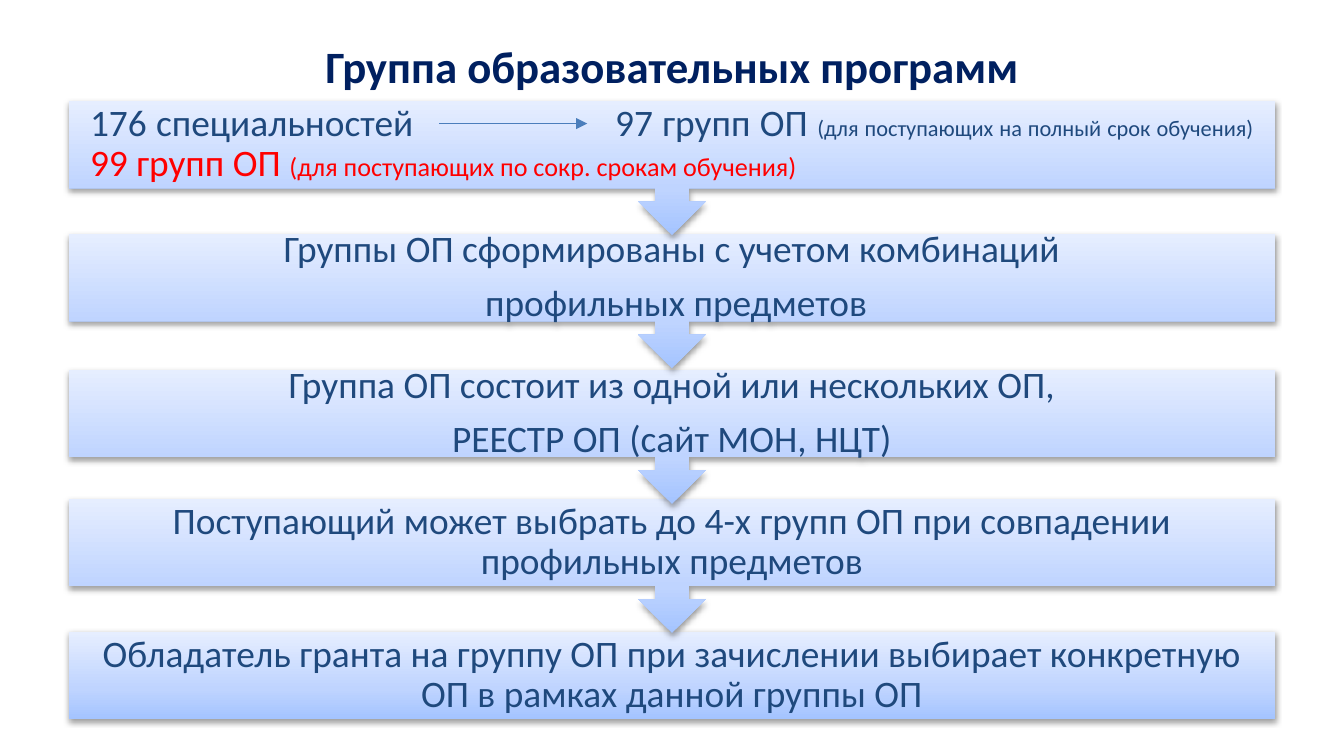
from lxml.etree import SubElement
from pptx import Presentation
from pptx.dml.color import RGBColor
from pptx.enum.shapes import MSO_CONNECTOR, MSO_SHAPE
from pptx.enum.text import MSO_ANCHOR, PP_ALIGN
from pptx.oxml.ns import qn
from pptx.util import Inches, Pt

COLORS = {
    "title": "002060",
    "text": "1F497D",
    "accent": "FF0000",
    "arrow": "4B7EBC",
    "bottom": "A4C4FF",
    "middle": "BFD4FF",
    "top": "E6EEFF",
    "shadow": "000000",
}
FONT = "Calibri"
LEFT, WIDTH = 0.51, 8.98
BOX_HEIGHT, CALLOUT_HEIGHT = 0.65, 1
INSET = 0.16
TAB = 3.9
STEPS = [
    (0.75, None),
    (1.74, ["Группы ОП сформированы с учетом комбинаций", " профильных предметов"]),
    (2.75, ["Группа ОП состоит из одной или нескольких ОП,", "РЕЕСТР ОП (сайт МОН, НЦТ)"]),
    (3.71, ["Поступающий может выбрать до 4-х групп ОП при совпадении профильных предметов"]),
    (4.7, ["Обладатель гранта на группу ОП при зачислении выбирает конкретную "
           "ОП в рамках данной группы ОП"]),
]


def add_run(paragraph, text, size=20, color="text", bold=False):
    run = paragraph.add_run()
    run.text = text
    run.font.name = FONT
    run.font.size = Pt(size)
    run.font.bold = bold
    run.font.color.rgb = RGBColor.from_string(COLORS[color])


def add_color(parent, color):
    return SubElement(parent, qn("a:srgbClr"), val=COLORS[color])


def style_box(shape):
    properties = shape._element.spPr
    gradient = SubElement(properties, qn("a:gradFill"), rotWithShape="1")
    stops = SubElement(gradient, qn("a:gsLst"))
    for position, color in ((0, "bottom"), (35, "middle"), (100, "top")):
        add_color(SubElement(stops, qn("a:gs"), pos=str(position * 1000)), color)
    SubElement(gradient, qn("a:lin"), ang=str(270 * 60000), scaled="0")
    shape.line.fill.background()
    shape.shadow.inherit = False
    shadow = SubElement(
        properties.find(qn("a:effectLst")), qn("a:outerShdw"),
        blurRad=str(Pt(3.1)), dist=str(Pt(1.6)), dir=str(90 * 60000), rotWithShape="0",
    )
    SubElement(add_color(shadow, "shadow"), qn("a:alpha"), val="38000")


def add_title(slide, left, top, width, height):
    box = slide.shapes.add_textbox(Inches(left), Inches(top), Inches(width), Inches(height))
    frame = box.text_frame
    frame.word_wrap = True
    frame.vertical_anchor = MSO_ANCHOR.MIDDLE
    paragraph = frame.paragraphs[0]
    paragraph.alignment = PP_ALIGN.CENTER
    add_run(paragraph, "Группа образовательных программ", 24, "title", True)


def add_step(slide, preset, left, top, width, height):
    shape = slide.shapes.add_shape(
        preset, Inches(left), Inches(top), Inches(width), Inches(height))
    style_box(shape)
    frame = shape.text_frame
    frame.word_wrap = True
    frame.vertical_anchor = MSO_ANCHOR.MIDDLE
    frame.margin_left = frame.margin_right = Inches(INSET)
    frame.margin_top = frame.margin_bottom = Inches(INSET)
    return frame


def format_paragraph(paragraph, alignment):
    paragraph.alignment = alignment
    paragraph.line_spacing = 0.9
    paragraph.space_after = Pt(7)


def fill_lines(frame, lines):
    for index, line in enumerate(lines):
        paragraph = frame.add_paragraph() if index else frame.paragraphs[0]
        format_paragraph(paragraph, PP_ALIGN.CENTER)
        add_run(paragraph, line)


def fill_counts(frame):
    paragraph = frame.paragraphs[0]
    format_paragraph(paragraph, PP_ALIGN.JUSTIFY)
    tabs = SubElement(paragraph._p.get_or_add_pPr(), qn("a:tabLst"))
    SubElement(tabs, qn("a:tab"), pos=str(Inches(TAB)), algn="l")
    add_run(paragraph, "176 специальностей\t97 групп ОП ")
    add_run(paragraph, "(для поступающих на полный срок обучения) ", 12)
    add_run(paragraph, "99 групп ОП ", 20, "accent")
    add_run(paragraph, "(для поступающих по сокр. срокам обучения)", 14, "accent")


def add_count_arrow(slide, left, top):
    start, end, y = Inches(left + 2.76), Inches(left + 3.86), Inches(top + 0.17)
    arrow = slide.shapes.add_connector(MSO_CONNECTOR.STRAIGHT, start, y, end, y)
    arrow.line.color.rgb = RGBColor.from_string(COLORS["arrow"])
    arrow.line.width = Pt(0.75)
    SubElement(arrow.line._get_or_add_ln(), qn("a:tailEnd"), type="triangle")
    SubElement(arrow._element.spPr, qn("a:effectLst"))


def add_flow(slide, left, width):
    last_top = STEPS[-1][0]
    for top, lines in reversed(STEPS):
        is_last = top == last_top
        preset = MSO_SHAPE.RECTANGLE if is_last else MSO_SHAPE.DOWN_ARROW_CALLOUT
        height = BOX_HEIGHT if is_last else CALLOUT_HEIGHT
        frame = add_step(slide, preset, left, top, width, height)
        if lines:
            fill_lines(frame, lines)
        else:
            fill_counts(frame)
    add_count_arrow(slide, left, STEPS[0][0])


def main():
    presentation = Presentation()
    presentation.slide_width = Inches(10)
    presentation.slide_height = presentation.slide_width * 9 // 16
    slide = presentation.slides.add_slide(presentation.slide_layouts[6])
    add_title(slide, 0.5, 0.1, 9, 0.77)
    add_flow(slide, LEFT, WIDTH)
    presentation.save("out.pptx")


if __name__ == "__main__":
    main()
